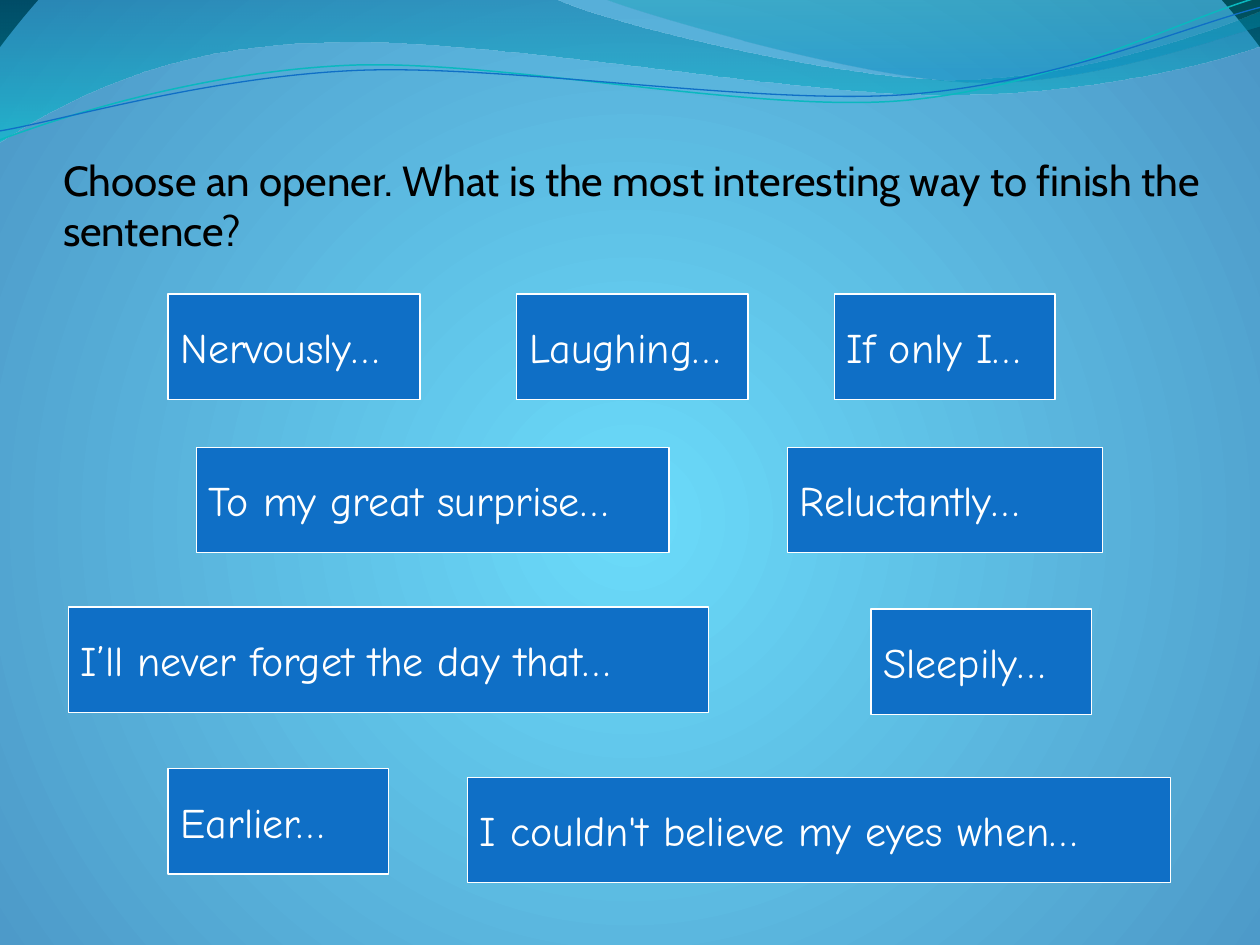
from lxml import etree
from pptx import Presentation, util as u
from pptx.dml.color import RGBColor
from pptx.enum import shapes, text
from pptx.oxml import ns

WIDTH, HEIGHT = 25.4, 19.05
BLUE, WHITE, BLACK = "0F6FC6", "FFFFFF", "000000"
LINEAR_DOWN = {"lin": {"ang": "5400000", "scaled": "0"}}

BANDS = [
    ([[(0, -0.03)], [(11.18, -0.03)],
      [(12.09, 0.43), (16.87, 1.6), (19.25, 1.6)],
      [(21.67, 1.6), (24.33, 0.66), (25.4, 0.23)],
      [(25.43, 0.91)],
      [(24.97, 1.12), (22.1, 1.93), (18.95, 1.91)],
      [(15.8, 1.91), (9.7, 0.71), (6.53, 0.86)],
      [(3.28, 0.89), (1.17, 2.11), (-0.03, 2.87)],
      [(0, -0.03)]],
     [(0, "0074A1", 45), (100, "00C6CF", 55)]),
    ([[(12.17, -0.03)],
      [(12.93, 0.28), (17.32, 1.57), (19.53, 1.65)],
      [(21.74, 1.75), (24.41, 0.81), (25.4, 0.53)],
      [(25.4, 0)], [(12.17, -0.03)]],
     [(0, "00A1A9", 30), (80, "008BBF", 45)]),
]
STRANDS = [
    ([[(-0.05, 2.22)],
      [(1.19, 1.82), (4.02, 1.04), (7.06, 1.05)],
      [(10.05, 1.07), (15.02, 2.37), (18.07, 2.29)],
      [(21.13, 2.2), (23.87, 0.91), (25.41, 0.55)]], "0AB8BF", 0.85),
    ([[(-0.04, 2.04)],
      [(1.16, 1.9), (4.18, 1.15), (7.2, 1.16)],
      [(10.25, 1.18), (15.13, 2.23), (18.18, 2.17)],
      [(21.21, 2.1), (23.93, 1.06), (25.45, 0.75)]], BLUE, 0.75),
]
STRAND_TILT = 357.3
OPENERS = [
    ("Nervously…", 2.85, 0, 5.08),
    ("To my great surprise…", 3.42, 3.09, 9.53),
    ("Laughing…", 9.88, 0, 4.66),
    ("If only I…", 16.28, 0, 4.45),
    ("I’ll never forget the day that…", 0.84, 6.31, 12.9),
    ("Reluctantly…", 15.33, 3.09, 6.35),
    ("Sleepily…", 17.02, 6.35, 4.45),
    ("I couldn't believe my eyes when…", 8.88, 9.74, 14.18),
    ("Earlier…", 2.85, 9.57, 4.45),
]


def colour(code):
    """Turn a hex string into a colour."""
    return RGBColor.from_string(code)


def assign(target, values):
    """Set attributes of an object from a dict."""
    for name, value in values.items():
        setattr(target, name, value)


def set_gradient(fill, owner, stops, direction):
    """Fill with (position, colour, opacity) stops and a dict of direction tags."""
    fill.gradient()
    grad = owner.find(".//" + ns.qn("a:gradFill"))
    grad.clear()
    stop_list = etree.SubElement(grad, ns.qn("a:gsLst"))
    for position, code, opacity in stops:
        stop = etree.SubElement(stop_list, ns.qn("a:gs"), pos=str(position * 1000))
        tone = etree.SubElement(stop, ns.qn("a:srgbClr"), val=code)
        if opacity < 100:
            etree.SubElement(tone, ns.qn("a:alpha"), val=str(opacity * 1000))
    for tag, attributes in direction.items():
        etree.SubElement(grad, ns.qn("a:" + tag), attributes)
    return grad


def add_outline(page, left, top, segments, close):
    """Draw straight (one point) and cubic (three point) segments from the given corner."""
    points = [(u.Cm(left + x), u.Cm(top + y)) for segment in segments for x, y in segment]
    builder = page.shapes.build_freeform(*points[0])
    builder.add_line_segments(points[1:], close=close)
    shape = builder.convert_to_shape()
    shape.shadow.inherit = False
    lines = iter(shape._element.findall(".//" + ns.qn("a:lnTo")))
    for segment in segments[1:]:
        steps = [next(lines) for _ in segment]
        if len(steps) == 3:
            curve = etree.Element(ns.qn("a:cubicBezTo"))
            steps[0].addprevious(curve)
            for step in steps:
                curve.append(step[0])
                step.getparent().remove(step)
    return shape


def add_background(page):
    """Fill the page with a glow around its middle."""
    grad = set_gradient(page.background.fill, page._element,
                        [(0, "6BDBFA", 100), (100, "4C98C7", 100), (100, "002C38", 100)],
                        {"path": {"path": "circle"}})
    etree.SubElement(grad[-1], ns.qn("a:fillToRect"),
                     l="10000", t="110000", r="10000", b="100000")


def add_waves(page, left, top):
    """Draw the translucent bands and the thin strands along the top."""
    for segments, stops in BANDS:
        band = add_outline(page, left, top, segments, True)
        set_gradient(band.fill, band._element, stops, LINEAR_DOWN)
        band.line.fill.background()
    for segments, code, weight in STRANDS:
        strand = add_outline(page, left, top, segments, False)
        strand.rotation = STRAND_TILT
        strand.fill.background()
        strand.line.color.rgb = colour(code)
        strand.line.width = u.Pt(weight)


def write(frame, words, font, code, layout):
    """Put one left-aligned paragraph into a text frame."""
    assign(frame, layout)
    para = frame.paragraphs[0]
    para.alignment = text.PP_ALIGN.LEFT
    span = para.add_run()
    span.text = words
    assign(span.font, {"name": font, "size": u.Pt(24)})
    span.font.color.rgb = colour(code)


def add_title(page, left, top, width, height):
    """Place the question in the title placeholder, in front of the waves."""
    title = page.shapes.title
    assign(title, {"left": u.Cm(left), "top": u.Cm(top),
                   "width": u.Cm(width), "height": u.Cm(height)})
    write(title.text_frame,
          "Choose an opener. What is the most interesting way to finish the sentence?",
          "Cabin", BLACK,
          {"margin_left": 0, "margin_top": u.Cm(0.13), "margin_right": 0, "margin_bottom": 0,
           "word_wrap": True, "auto_size": text.MSO_AUTO_SIZE.NONE,
           "vertical_anchor": text.MSO_ANCHOR.BOTTOM})
    page.shapes._spTree.append(title._element)


def add_openers(page, left, top, height):
    """Scatter the opener cards from the given corner."""
    for words, x, y, width in OPENERS:
        card = page.shapes.add_shape(shapes.MSO_SHAPE.RECTANGLE, u.Cm(left + x),
                                     u.Cm(top + y), u.Cm(width), u.Cm(height))
        card.shadow.inherit = False
        card.fill.solid()
        card.fill.fore_color.rgb = colour(BLUE)
        card.line.color.rgb = colour(WHITE)
        card.line.width = u.Pt(0.75)
        write(card.text_frame, words, "Comic Neue", WHITE,
              {"word_wrap": False, "vertical_anchor": text.MSO_ANCHOR.MIDDLE})


def main():
    """Build and save the deck."""
    deck = Presentation()
    assign(deck, {"slide_width": u.Cm(WIDTH), "slide_height": u.Cm(HEIGHT)})
    page = deck.slides.add_slide(deck.slide_layouts[5])
    add_background(page)
    add_waves(page, 0, 0)
    add_title(page, 1.27, 1.96, 23.06, 3.18)
    add_openers(page, 0.54, 5.93, 2.12)
    deck.save("out.pptx")


if __name__ == "__main__":
    main()
